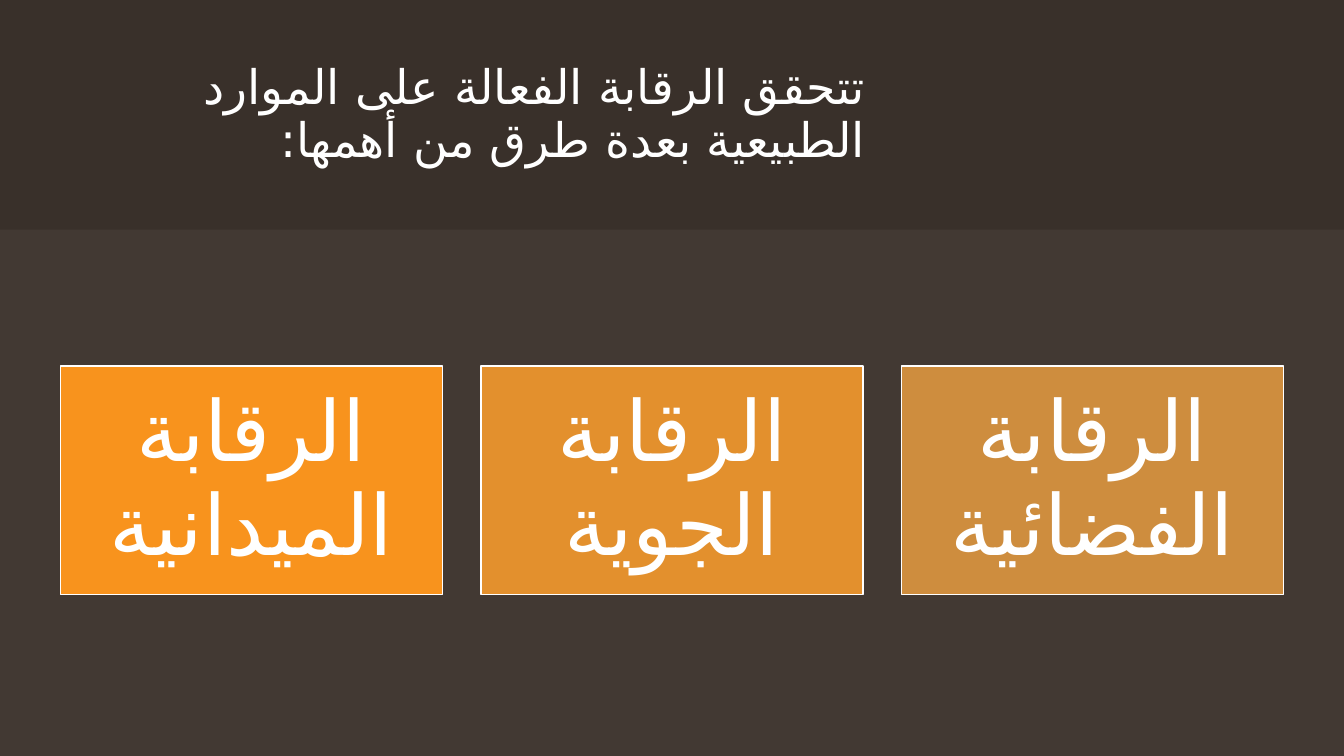
from lxml import etree
from pptx import Presentation
from pptx.dml.color import RGBColor
from pptx.enum.lang import MSO_LANGUAGE_ID
from pptx.enum.shapes import MSO_SHAPE
from pptx.enum.text import MSO_ANCHOR, PP_ALIGN
from pptx.oxml.ns import qn
from pptx.util import Cm, Pt

RECTANGLE = MSO_SHAPE.RECTANGLE
MIDDLE = MSO_ANCHOR.MIDDLE
CENTER, RIGHT = PP_ALIGN.CENTER, PP_ALIGN.RIGHT
ARABIC = MSO_LANGUAGE_ID.ARABIC

BROWN = RGBColor(0x39, 0x30, 0x2A)
MIST = RGBColor(0xEE, 0xEA, 0xE7)
WHITE = RGBColor(0xFF, 0xFF, 0xFF)
ORANGE = RGBColor(0xF8, 0x93, 0x1D)
AMBER = RGBColor(0xE3, 0x90, 0x2D)
TAN = RGBColor(0xCE, 0x8D, 0x3E)

ARABIC_FONT = "DejaVu Sans"
SLIDE_WIDTH, SLIDE_HEIGHT = Cm(33.87), Cm(19.05)
MARGIN = Cm(1.52)
BAND_TOP = Cm(5.79)

TITLE = "تتحقق الرقابة الفعالة على الموارد الطبيعية بعدة طرق من أهمها:"
METHODS = [
    ("الرقابة الميدانية", ORANGE),
    ("الرقابة الجوية", AMBER),
    ("الرقابة الفضائية", TAN),
]


def write_arabic(frame, text, font_name, size, alignment, inset):
    """Fill a text frame with one right-to-left paragraph."""
    frame.word_wrap = True
    frame.vertical_anchor = MIDDLE
    frame.margin_left = frame.margin_right = inset
    frame.margin_top = frame.margin_bottom = inset
    paragraph = frame.paragraphs[0]
    paragraph.alignment = alignment
    paragraph.line_spacing = 0.93
    paragraph._p.get_or_add_pPr().set("rtl", "1")
    run = paragraph.add_run()
    run.text = text
    run.font.name = font_name
    run.font.size = Pt(size)
    run.font.color.rgb = WHITE
    run.font.language_id = ARABIC
    # Arabic letters take the complex-script font
    script_font = etree.SubElement(run.font._element, qn("a:cs"))
    script_font.set("typeface", ARABIC_FONT)


def add_rectangle(slide, left, top, width, height, color):
    rectangle = slide.shapes.add_shape(RECTANGLE, left, top, width, height)
    rectangle.shadow.inherit = False
    rectangle.fill.solid()
    rectangle.fill.fore_color.rgb = color
    return rectangle


def add_title(slide, left, top, width, height):
    title = slide.shapes.add_textbox(left, top, width, height)
    write_arabic(title.text_frame, TITLE, "Lato", 34, RIGHT, 0)


def add_content_band(slide, left, top, width, height):
    band = add_rectangle(slide, left, top, width, height, MIST)
    band.line.fill.background()
    # Let the background show through: 5% opacity
    color = band.fill._xPr.find(qn("a:solidFill"))[0]
    etree.SubElement(color, qn("a:alpha")).set("val", "5000")


def add_method_cards(slide, left, top, width, height):
    gap = Cm(0.97)
    card_width = (width - gap * (len(METHODS) - 1)) // len(METHODS)
    for index, (method, color) in enumerate(METHODS):
        card_left = left + index * (card_width + gap)
        card = add_rectangle(slide, card_left, top, card_width, height, color)
        card.line.color.rgb = WHITE
        card.line.width = Pt(1)
        write_arabic(card.text_frame, method, "Calibri", 60, CENTER, Cm(0.64))


def main():
    presentation = Presentation()
    presentation.slide_width = SLIDE_WIDTH
    presentation.slide_height = SLIDE_HEIGHT
    slide = presentation.slides.add_slide(presentation.slide_layouts[6])
    slide.background.fill.solid()
    slide.background.fill.fore_color.rgb = BROWN

    add_title(slide, MARGIN, MARGIN, Cm(20.29), Cm(2.74))
    add_content_band(slide, 0, BAND_TOP, SLIDE_WIDTH, SLIDE_HEIGHT - BAND_TOP)
    add_method_cards(slide, MARGIN, Cm(9.22), SLIDE_WIDTH - 2 * MARGIN, Cm(5.77))

    presentation.save("out.pptx")


if __name__ == "__main__":
    main()
